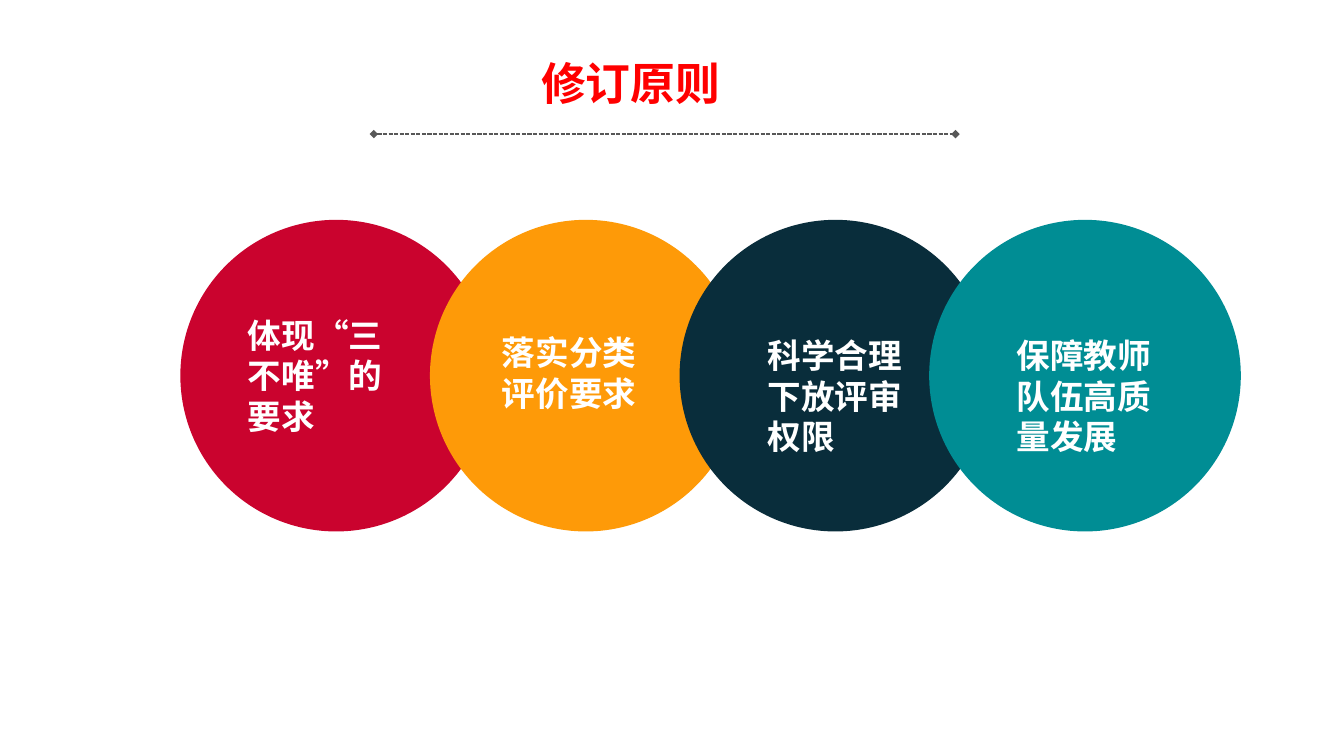
from pptx import Presentation
from pptx.dml.color import RGBColor
from pptx.enum.dml import MSO_LINE
from pptx.enum.lang import MSO_LANGUAGE_ID
from pptx.enum.shapes import MSO_CONNECTOR, MSO_SHAPE
from pptx.enum.text import MSO_AUTO_SIZE
from pptx.oxml.ns import qn
from pptx.util import Pt
from lxml import etree

DASH = MSO_LINE.SQUARE_DOT
CHINESE = MSO_LANGUAGE_ID.SIMPLIFIED_CHINESE
STRAIGHT = MSO_CONNECTOR.STRAIGHT
DONUT, OVAL = MSO_SHAPE.DONUT, MSO_SHAPE.OVAL
GROW = MSO_AUTO_SIZE.SHAPE_TO_FIT_TEXT


def color(code):
    return RGBColor.from_string(code)


class Board:
    """Draws styled elements on one slide."""

    font = "Noto Sans CJK SC"
    leading = 1.21

    def __init__(self, slide):
        self.slide = slide

    def rule(self, left, right, y, tint):
        line = self.slide.shapes.add_connector(STRAIGHT, Pt(left), Pt(y), Pt(right), Pt(y))
        line.line.color.rgb = color(tint)
        line.line.width = Pt(1)
        line.line.dash_style = DASH
        for end in ("a:headEnd", "a:tailEnd"):
            etree.SubElement(line.line._get_or_add_ln(), qn(end), type="diamond")
        etree.SubElement(line._element.spPr, qn("a:effectLst"))

    def disc(self, left, top, size, inset, tint):
        group = self.slide.shapes.add_group_shape()
        for kind, gap in ((DONUT, 0), (OVAL, inset)):
            side = Pt(size - 2 * gap)
            shape = group.shapes.add_shape(kind, Pt(left + gap), Pt(top + gap), side, side)
            shape.shadow.inherit = False
            shape.fill.solid()
            shape.fill.fore_color.rgb = color(tint)
            shape.line.fill.background()
            if kind == DONUT:
                shape.adjustments[0] = 0.049

    def text(self, left, top, width, height, words, size, tint):
        box = self.slide.shapes.add_textbox(Pt(left), Pt(top), Pt(width), Pt(height))
        frame = box.text_frame
        frame.word_wrap = True
        frame.auto_size = GROW
        para = frame.paragraphs[0]
        para.line_spacing = Pt(round(size * self.leading, 1))
        run = para.add_run()
        run.text = words
        style = {"name": self.font, "size": Pt(size), "bold": True, "language_id": CHINESE}
        for key, value in style.items():
            setattr(run.font, key, value)
        run.font.color.rgb = color(tint)
        latin = run.font._element.find(qn("a:latin"))
        latin.addnext(etree.Element(qn("a:ea"), typeface=self.font))


def main():
    deck = Presentation()
    deck.slide_width, deck.slide_height = Pt(960), Pt(540)
    board = Board(deck.slides.add_slide(deck.slide_layouts[6]))
    board.rule(267, 682.5, 95.8, "585858")
    tints = ("CA032E", "FE9A08", "092D3B", "008D94")
    for i, tint in enumerate(tints):
        board.disc(128.8 + 178.3 * i, 157, 222.6, 4.8, tint)
    labels = (
        (170, 221, 94.3, "体现“三不唯”的要求"),
        (351.4, 233.3, 65.3, "落实分类评价要求"),
        (541.2, 235.6, 94.3, "科学合理下放评审权限"),
        (719.2, 235.6, 94.3, "保障教师队伍高质量发展"),
    )
    for left, top, height, words in labels:
        board.text(left, top, 111, height, words, 24, "FFFFFF")
    board.text(379.4, 36, 329, 46, "修订原则", 32, "FF0000")
    deck.save("out.pptx")


if __name__ == "__main__":
    main()
